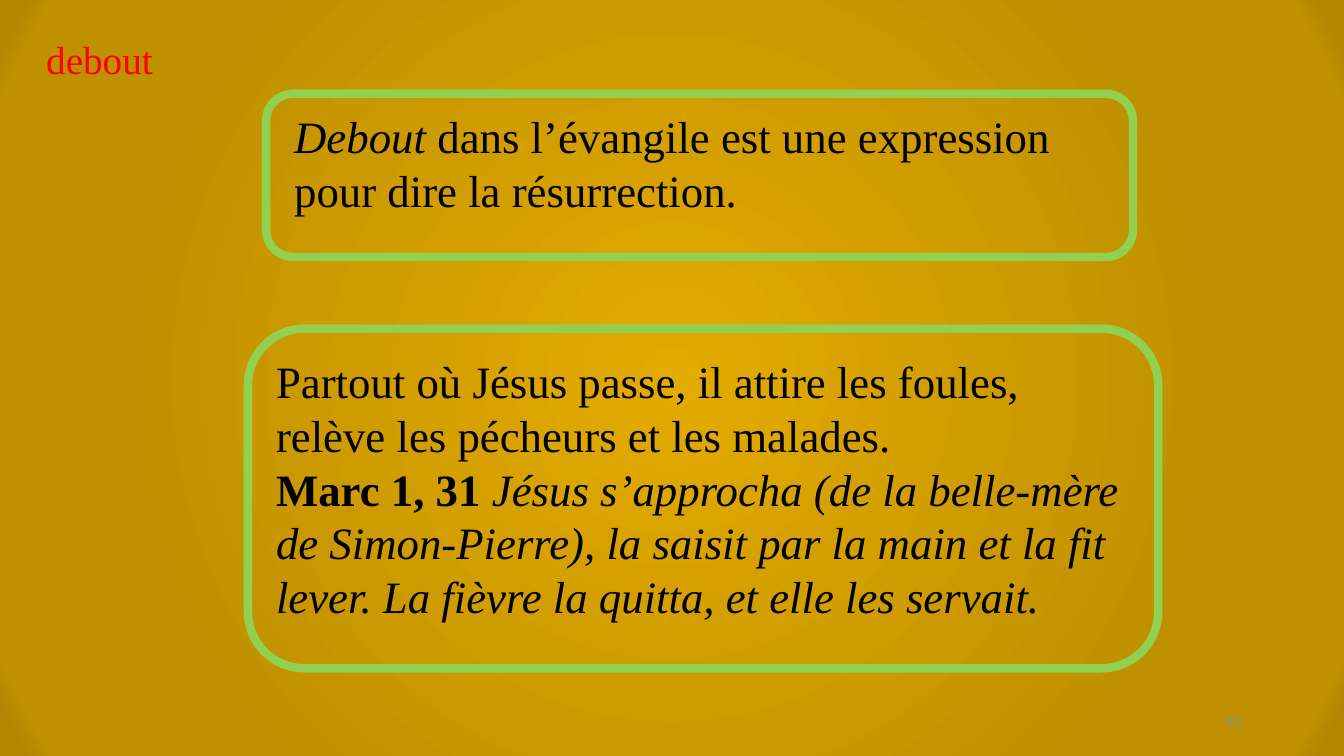
from dataclasses import dataclass

from pptx import Presentation
from pptx.dml.color import RGBColor
from pptx.enum.shapes import MSO_SHAPE as Shape
from pptx.enum.text import MSO_ANCHOR as Anchor, MSO_AUTO_SIZE as AutoSize, PP_ALIGN as Align
from pptx.oxml import parse_xml
from pptx.oxml.ns import nsdecls
from pptx.util import Inches, Pt


@dataclass(frozen=True)
class Theme:
    serif: str = "Times New Roman"
    sans: str = "Calibri"
    ink: str = "000000"
    accent: str = "FF0000"
    border: str = "92D050"
    muted: str = "8C8C8C"
    glow: tuple = ((0, "E3AB00"), (73, "BF9000"), (94, "BF9000"), (97, "B28600"))
    body_size: int = 32
    keyword_size: int = 28
    number_size: int = 12
    border_width: int = 6


class SlideBuilder:
    """Places elements by percentages of the slide's width and height."""

    def __init__(self, deck, theme):
        self.deck = deck
        self.theme = theme
        self.page = deck.slides.add_slide(deck.slide_layouts[6])

    def area(self, left, top, width, height):
        across, down = self.deck.slide_width / 100, self.deck.slide_height / 100
        return [round(n) for n in (left * across, top * down, width * across, height * down)]

    def background(self):
        stops = "".join(
            f'<a:gs pos="{share * 1000}"><a:srgbClr val="{color}"/></a:gs>'
            for share, color in self.theme.glow)
        self.page.element.cSld.insert(0, parse_xml(
            f'<p:bg {nsdecls("p", "a")}><p:bgPr><a:gradFill rotWithShape="1">'
            f'<a:gsLst>{stops}</a:gsLst><a:path path="circle">'
            '<a:fillToRect l="50000" t="50000" r="50000" b="50000"/></a:path>'
            '</a:gradFill><a:effectLst/></p:bgPr></p:bg>'))

    def text(self, area, paragraphs, size, color, font=None, parent=None):
        """Each paragraph is a list of (text, style) spans; style is "", "b" or "i"."""
        box = (parent or self.page).shapes.add_textbox(*self.area(*area))
        frame = box.text_frame
        frame.word_wrap = True
        frame.auto_size = AutoSize.SHAPE_TO_FIT_TEXT
        for index, spans in enumerate(paragraphs):
            para = frame.add_paragraph() if index else frame.paragraphs[0]
            for words, style in spans:
                span = para.add_run()
                span.text = words
                span.font.name = font or self.theme.serif
                span.font.size = Pt(size)
                span.font.color.rgb = RGBColor.from_string(color)
                span.font.bold = style == "b"
                span.font.italic = style == "i"
        return frame

    def panel(self, area, drop, text_height, paragraphs):
        """A rounded frame grouped with its text, which starts drop below the frame's top."""
        left, top, width, height = area
        group = self.page.shapes.add_group_shape()
        border = group.shapes.add_shape(Shape.ROUNDED_RECTANGLE, *self.area(*area))
        border.shadow.inherit = False
        border.fill.background()
        border.line.color.rgb = RGBColor.from_string(self.theme.border)
        border.line.width = Pt(self.theme.border_width)
        self.text((left + 1.35, top + drop, width - 3.15, text_height), paragraphs,
                  self.theme.body_size, self.theme.ink, parent=group)

    def page_number(self, area, number):
        frame = self.text(area, [[(number, "")]], self.theme.number_size,
                          self.theme.muted, self.theme.sans)
        frame.auto_size = AutoSize.NONE
        frame.vertical_anchor = Anchor.MIDDLE
        frame.paragraphs[0].alignment = Align.RIGHT


def main():
    deck = Presentation()
    deck.slide_width, deck.slide_height = Inches(13.33), Inches(7.5)
    theme = Theme()
    slide = SlideBuilder(deck, theme)
    slide.background()
    slide.page_number((70.65, 92.67, 22.5, 5.33), "42")
    slide.text((2.7, 4, 11.7, 7.6), [[("debout", "")]], theme.keyword_size, theme.accent)
    slide.panel((18.45, 43.47, 67.73, 44.93), 2.67, 35.2, [
        [("Partout où Jésus passe, il attire les foules, "
          "relève les pécheurs et les malades.", "")],
        [("Marc 1, 31 ", "b"),
         ("Jésus s’approcha (de la belle-mère de Simon-Pierre), la saisit par la main "
          "et la fit lever. La fièvre la quitta, et elle les servait.", "i")],
    ])
    slide.panel((19.8, 12.4, 64.5, 21.6), 1.33, 14.4, [
        [("Debout ", "i"),
         ("dans l’évangile est une expression pour dire la résurrection.", "")],
    ])
    deck.save("out.pptx")


if __name__ == "__main__":
    main()
